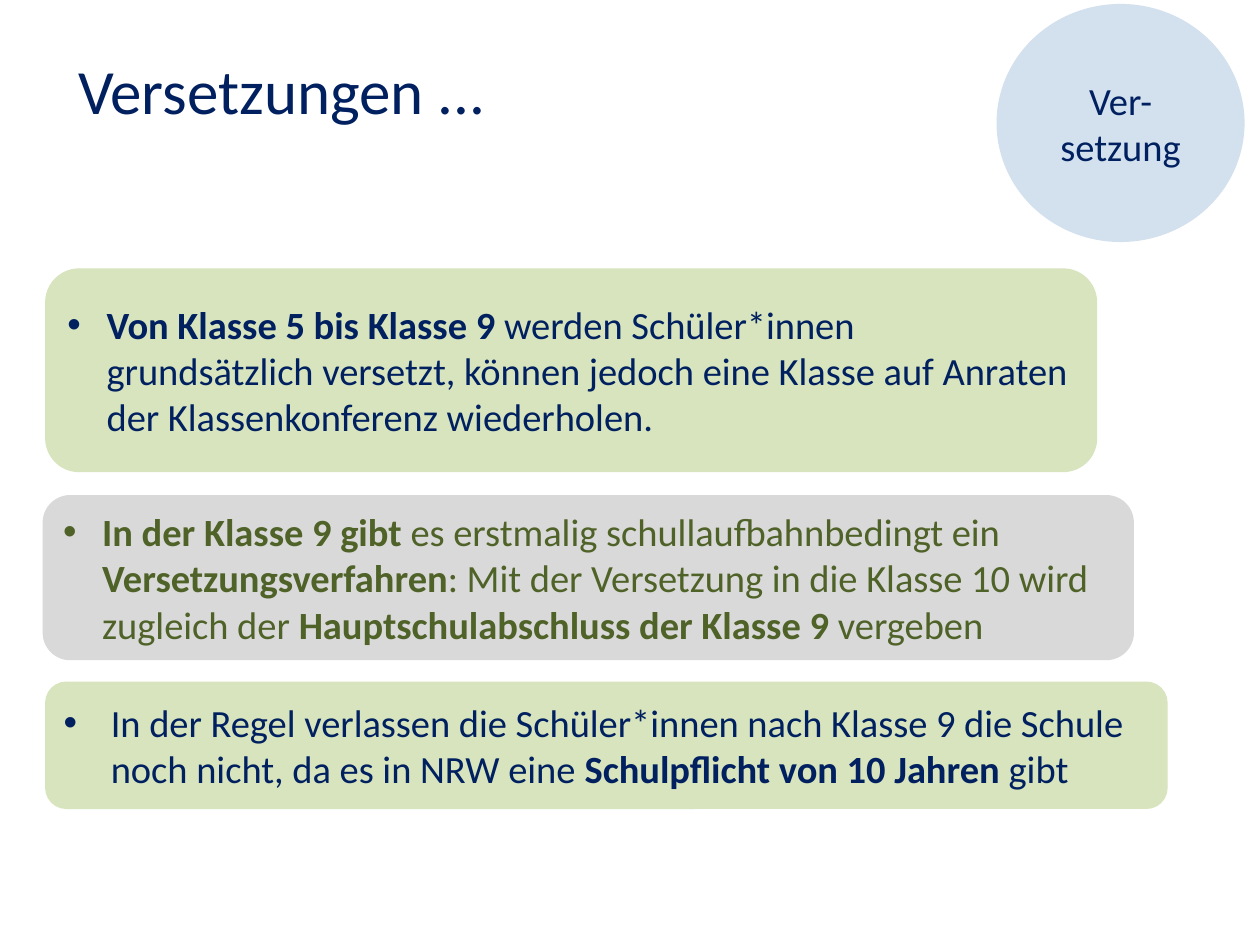
from dataclasses import dataclass

from lxml import etree
from pptx import Presentation
from pptx.dml.color import RGBColor
from pptx.enum.shapes import MSO_SHAPE
from pptx.enum.text import MSO_ANCHOR, MSO_AUTO_SIZE, PP_ALIGN
from pptx.oxml.ns import qn
from pptx.util import Cm, Pt

ROUNDED = MSO_SHAPE.ROUNDED_RECTANGLE
CIRCLE = MSO_SHAPE.FLOWCHART_CONNECTOR
MIDDLE, TOP = MSO_ANCHOR.MIDDLE, MSO_ANCHOR.TOP
LEFT, CENTER = PP_ALIGN.LEFT, PP_ALIGN.CENTER
FIT_SHAPE = MSO_AUTO_SIZE.SHAPE_TO_FIT_TEXT
BREAK = "\n"


@dataclass(frozen=True)
class Theme:
    font: str = "Calibri"
    title_size: int = 36
    body_size: int = 22
    navy: str = "002060"
    olive: str = "4F6228"
    green: str = "D7E4BD"
    grey: str = "D9D9D9"
    blue: str = "B9CDE5"
    blue_opacity: int = 62


def apply_format(target, values):
    for name, value in values.items():
        setattr(target, name, value)


class SlideBuilder:
    """Adds styled elements to the current slide."""

    def __init__(self, slide, theme):
        self.slide = slide
        self.theme = theme

    def style_font(self, font, size, color, bold=False):
        apply_format(font, {"name": self.theme.font, "size": Pt(size), "bold": bold})
        font.color.rgb = RGBColor.from_string(color)

    def title(self, wording, box):
        heading = self.slide.shapes.title
        apply_format(heading, dict(zip(("left", "top", "width", "height"), map(Cm, box))))
        frame = heading.text_frame
        frame.text = wording
        apply_format(frame, {"word_wrap": False, "auto_size": FIT_SHAPE, "vertical_anchor": TOP})
        paragraph = frame.paragraphs[0]
        paragraph.alignment = LEFT
        self.style_font(paragraph.runs[0].font, self.theme.title_size, self.theme.navy)

    def panel(self, preset, box, fill):
        panel = self.slide.shapes.add_shape(preset, *map(Cm, box))
        panel.shadow.inherit = False
        panel.line.fill.background()
        panel.fill.solid()
        panel.fill.fore_color.rgb = RGBColor.from_string(fill)
        apply_format(panel.text_frame, {"word_wrap": True, "vertical_anchor": MIDDLE})
        return panel

    def bullet_panel(self, box, fill, color, phrases, indent, space_after):
        paragraph = self.panel(ROUNDED, box, fill).text_frame.paragraphs[0]
        properties = paragraph._p.get_or_add_pPr()
        properties.set("marL", str(Cm(indent)))
        properties.set("indent", str(-Cm(indent)))
        etree.SubElement(properties, qn("a:buFont"), typeface="Arial")
        etree.SubElement(properties, qn("a:buChar"), char="•")
        apply_format(paragraph, {"alignment": LEFT, "space_after": Pt(space_after)})
        for wording, bold in phrases:
            if wording == BREAK:
                paragraph.add_line_break()
                continue
            run = paragraph.add_run()
            run.text = wording
            self.style_font(run.font, self.theme.body_size, color, bold)

    def badge(self, wording, box):
        badge = self.panel(CIRCLE, box, self.theme.blue)
        color = badge._element.spPr.find(qn("a:solidFill"))[0]
        etree.SubElement(color, qn("a:alpha"), val=str(self.theme.blue_opacity * 1000))
        paragraph = badge.text_frame.paragraphs[0]
        paragraph.alignment = CENTER
        run = paragraph.add_run()
        run.text = wording
        self.style_font(run.font, self.theme.body_size, self.theme.navy)


def main():
    theme = Theme()
    deck = Presentation()
    apply_format(deck, {"slide_width": Cm(25.4), "slide_height": Cm(19.05)})
    builder = SlideBuilder(deck.slides.add_slide(deck.slide_layouts[5]), theme)

    builder.title("Versetzungen ...", (1.32, 0.91, 8.81, 1.8))
    rules = [
        ((0.91, 5.41, 21.21, 4.11), theme.green, theme.navy, [
            ("Von Klasse 5 bis Klasse 9 ", True),
            ("werden Schüler*innen", False),
            (BREAK, False),
            ("grundsätzlich versetzt, können jedoch eine Klasse auf Anraten "
             "der Klassenkonferenz wiederholen.", False),
        ], 0.79, 10),
        ((0.86, 9.98, 22, 3.33), theme.grey, theme.olive, [
            ("In der Klasse 9 gibt ", True),
            ("es erstmalig schullaufbahnbedingt ein ", False),
            ("Versetzungsverfahren", True),
            (": Mit der Versetzung in die Klasse 10 wird zugleich der ", False),
            ("Hauptschulabschluss der Klasse 9 ", True),
            ("vergeben", False),
        ], 0.79, 10),
        ((0.91, 13.74, 22.63, 2.57), theme.green, theme.navy, [
            ("In der Regel verlassen die Schüler*innen nach Klasse 9 die Schule "
             "noch nicht, da es in NRW eine ", False),
            ("Schulpflicht von 10 Jahren ", True),
            ("gibt", False),
        ], 0.95, 0),
    ]
    for rule in rules:
        builder.bullet_panel(*rule)
    builder.badge("Ver-setzung", (20.09, 0.08, 5, 4.8))

    deck.save("out.pptx")


if __name__ == "__main__":
    main()
